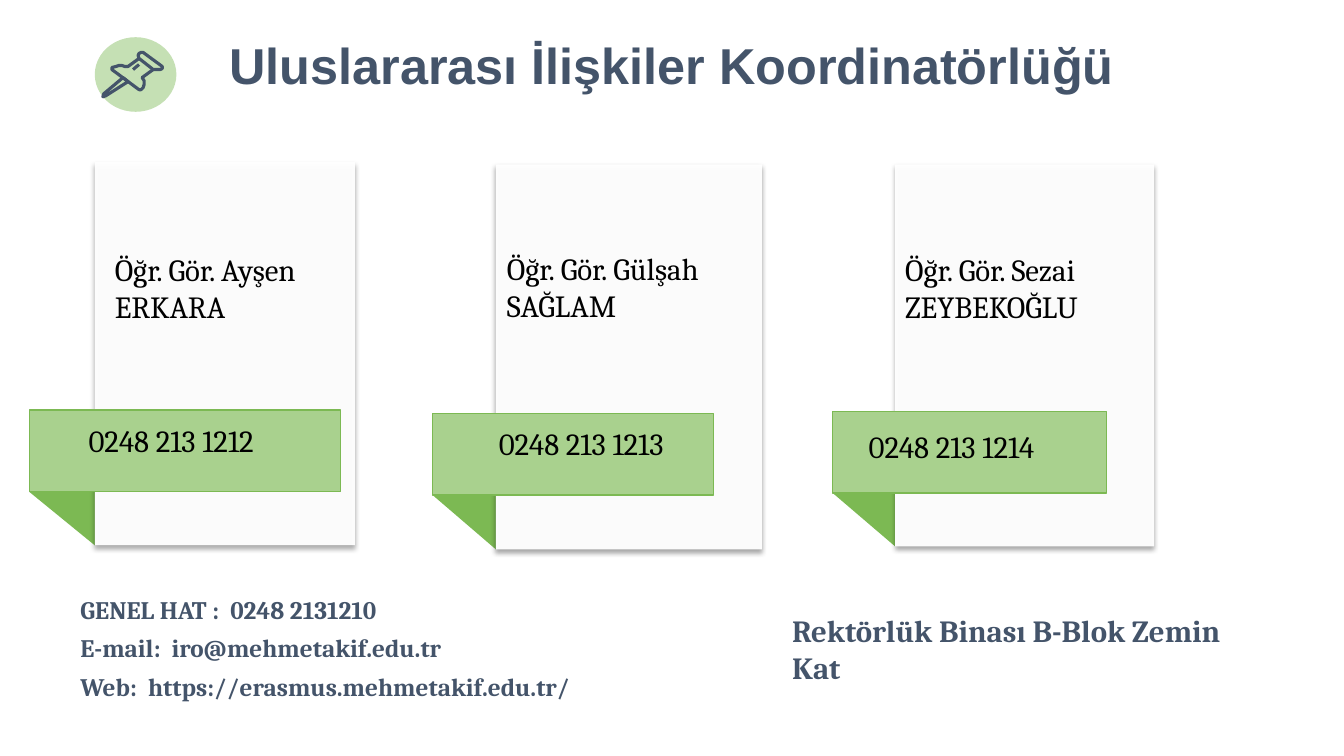
from lxml import etree
from pptx import Presentation
from pptx.dml.color import RGBColor
from pptx.enum.shapes import MSO_SHAPE
from pptx.enum.text import MSO_ANCHOR, MSO_AUTO_SIZE, PP_ALIGN
from pptx.oxml.ns import qn
from pptx.util import Pt

RECT = MSO_SHAPE.RECTANGLE
TRIANGLE = MSO_SHAPE.RIGHT_TRIANGLE
DISC = MSO_SHAPE.FLOWCHART_CONNECTOR
TOP, BOTTOM = MSO_ANCHOR.TOP, MSO_ANCHOR.BOTTOM
LEFT, CENTER = PP_ALIGN.LEFT, PP_ALIGN.CENTER
GROW, FIXED = MSO_AUTO_SIZE.SHAPE_TO_FIT_TEXT, MSO_AUTO_SIZE.NONE

THEME = {
    "sheet": "FFFFFF", "ribbon": "A9D18E", "fold": "7CB953",
    "disc": "C5E0B4", "ink": "44546A", "shadow": "000000",
    "title": {"name": "Arial", "size": Pt(36), "bold": True, "color": "44546A"},
    "card": {"name": "Cambria", "size": Pt(22), "bold": False, "color": "000000"},
    "contact": {"name": "Cambria", "size": Pt(18), "bold": True, "color": "44546A"},
    "address": {"name": "Cambria", "size": Pt(22), "bold": True, "color": "44546A"},
}

TITLE = "Uluslararası İlişkiler Koordinatörlüğü"
CONTACTS = [
    "GENEL HAT :  0248 2131210",
    "E-mail:  iro@mehmetakif.edu.tr",
    "Web:  https://erasmus.mehmetakif.edu.tr/",
]
ADDRESS = "Rektörlük Binası B-Blok Zemin Kat"

CARDS = [
    {"name": "Öğr. Gör. Ayşen ERKARA", "phone": "0248 213 1212",
     "sheet": (67.7, 115.9, 185.8, 273.6), "ribbon": (20.9, 293, 222.5, 58.3),
     "name_box": (74.9, 175.7, 171.4, 60.5), "phone_box": (56.2, 298, 203, 33.8),
     "opacities": (96,)},
    {"name": "Öğr. Gör. Gülşah SAĞLAM", "phone": "0248 213 1213",
     "sheet": (354.2, 117.4, 190.1, 275), "ribbon": (308.9, 295.2, 200.9, 58.3),
     "name_box": (355, 175, 190, 60.5), "phone_box": (349.2, 299.5, 155.5, 33.8),
     "opacities": (11, 96)},
    {"name": "Öğr. Gör. Sezai ZEYBEKOĞLU", "phone": "0248 213 1214",
     "sheet": (639.4, 117.4, 185, 272.9), "ribbon": (594.7, 293.8, 195.8, 58.3),
     "name_box": (639.4, 175.7, 178.6, 60.5), "phone_box": (613.4, 301.7, 169.2, 33.8),
     "opacities": (11, 96)},
]

PIN_UNIT = Pt(0.72)
PIN_PARTS = [
    ([(122, 77), (103, 93), (102, 96), (105, 95), (127, 81)], True),
    ([(138, 58), (152, 69), (156, 69), (159, 69), (161, 68), (161, 66), (142, 52),
      (140, 52), (138, 53), (137, 55)], True),
    ([(138, 58), (127, 66), (124, 66), (121, 65), (118, 65), (115, 66), (111, 67),
      (111, 69), (138, 89), (140, 89), (142, 87), (143, 84), (143, 80), (141, 77),
      (152, 69)], False),
    ([(132, 69), (138, 64)], False),
]


def rgb(code):
    return RGBColor.from_string(code)


def add_block(shapes, kind, box, fill, line=None):
    s = shapes.add_shape(kind, *map(Pt, box))
    s.shadow.inherit = False
    s.fill.solid()
    s.fill.fore_color.rgb = rgb(fill)
    if line:
        s.line.color.rgb = rgb(line)
        s.line.width = Pt(1)
    else:
        s.line.fill.background()
    return s


def add_alpha(color, percent):
    etree.SubElement(color, qn("a:alpha"), val=str(percent * 1000))


def add_sheet(shapes, box, opacity):
    sp_pr = add_block(shapes, RECT, box, THEME["sheet"])._element.spPr
    add_alpha(sp_pr.find(qn("a:solidFill"))[0], opacity)
    shadow = etree.SubElement(
        sp_pr.find(qn("a:effectLst")), qn("a:outerShdw"), blurRad=str(Pt(3.5)),
        dist=str(Pt(2.2)), dir="5400000", rotWithShape="0")
    add_alpha(etree.SubElement(shadow, qn("a:srgbClr"), val=THEME["shadow"]), 32)


def add_text(shapes, box, lines, style, align=LEFT, anchor=TOP, fit=GROW,
             insets=None, spacing=None):
    s = shapes.add_textbox(*map(Pt, box))
    tf = s.text_frame
    frame = {"word_wrap": True, "auto_size": fit, "vertical_anchor": anchor}
    for key, value in {**frame, **(insets or {})}.items():
        setattr(tf, key, value)
    for i, line in enumerate(lines):
        p = tf.add_paragraph() if i else tf.paragraphs[0]
        for key, value in {"alignment": align, **(spacing or {})}.items():
            setattr(p, key, value)
        r = p.add_run()
        r.text = line
        for key, value in THEME[style].items():
            if key == "color":
                r.font.color.rgb = rgb(value)
            else:
                setattr(r.font, key, value)


def add_card(shapes, card):
    group = shapes.add_group_shape().shapes
    left, top, _, height = card["sheet"]
    x, y, _, depth = card["ribbon"]
    fold_top = y + depth
    fold = (x, fold_top, left - x, top + height - fold_top)
    add_block(group, TRIANGLE, fold, THEME["fold"]).rotation = 180
    for opacity in card["opacities"]:
        add_sheet(group, card["sheet"], opacity)
    add_block(group, RECT, card["ribbon"], THEME["ribbon"], THEME["fold"])
    for part in ("name", "phone"):
        add_text(shapes, card[part + "_box"], [card[part]], "card")


def add_pin(shapes):
    group = shapes.add_group_shape().shapes
    add_block(group, DISC, (67.7, 26.6, 58.3, 53.3), THEME["disc"])
    for points, closed in PIN_PARTS:
        builder = group.build_freeform(*points[0], scale=PIN_UNIT)
        builder.add_line_segments(points[1:], close=closed)
        s = builder.convert_to_shape()
        s.shadow.inherit = False
        s.fill.background()
        s.line.color.rgb = rgb(THEME["ink"])
        s.line.width = Pt(2.25)


def main():
    prs = Presentation()
    prs.slide_width, prs.slide_height = Pt(960), Pt(540)
    shapes = prs.slides.add_slide(prs.slide_layouts[6]).shapes
    for card in CARDS:
        add_card(shapes, card)
    add_text(shapes, (0, 0, 960, 75), [TITLE], "title", CENTER, BOTTOM, FIXED,
             {"margin_bottom": Pt(8.6)}, {"line_spacing": 0.7})
    add_pin(shapes)
    sides = ("left", "top", "right", "bottom")
    add_text(shapes, (50.4, 417, 417.6, 119.5), CONTACTS, "contact", fit=FIXED,
             insets={"margin_" + side: Pt(7.2) for side in sides},
             spacing={"space_before": Pt(6)})
    add_text(shapes, (558.7, 433.4, 328.3, 60.5), [ADDRESS], "address")
    prs.save("out.pptx")


if __name__ == "__main__":
    main()
